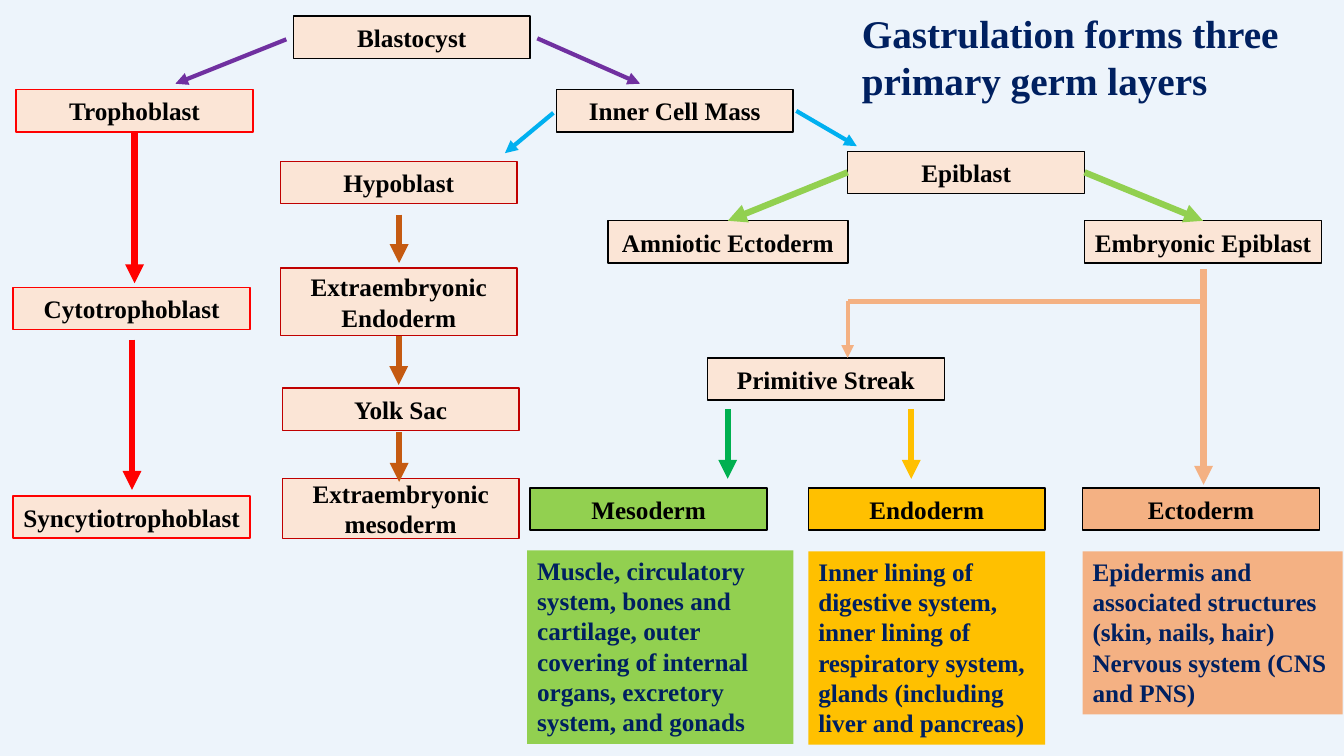
from dataclasses import dataclass
from typing import NamedTuple

from lxml.etree import SubElement
from pptx import Presentation
from pptx.dml.color import RGBColor
from pptx.enum.shapes import MSO_CONNECTOR as Connector, MSO_SHAPE as Preset
from pptx.enum.text import MSO_ANCHOR as Anchor, MSO_AUTO_SIZE as AutoSize, PP_ALIGN as Align
from pptx.oxml.ns import qn
from pptx.util import Pt


@dataclass(frozen=True)
class Theme:
    font: str = "Times New Roman"
    title_size: float = 28
    text_size: float = 18
    background: str = "EDF4FB"
    navy: str = "002060"
    black: str = "000000"
    cream: str = "FBE5D6"
    red: str = "FF0000"
    crimson: str = "C00000"
    purple: str = "7030A0"
    blue: str = "00B0F0"
    brown: str = "C55A11"
    lime: str = "92D050"
    green: str = "00B050"
    amber: str = "FFC000"
    peach: str = "F4B183"
    thin: float = 3
    thick: float = 4.5


THEME = Theme()


@dataclass(frozen=True)
class Box:
    text: str
    left: float
    top: float
    line: str = THEME.black
    fill: str = THEME.cream
    width: float = 169.2
    height: float = 30.2


@dataclass(frozen=True)
class Panel:
    paragraphs: tuple[str, ...]
    left: float
    top: float
    width: float
    height: float
    fill: str


class Point(NamedTuple):
    x: float
    y: float


class Side(NamedTuple):
    """Middle of a named box's side: 0 top, 1 left, 2 bottom, 3 right."""
    box: str
    index: int


@dataclass(frozen=True)
class Arrow:
    start: Point | Side
    end: Point | Side
    color: str
    width: float = THEME.thick
    head: bool = True


GERM_ROW = 348.5
BOXES = (
    Box("Blastocyst", 209.5, 11.5),
    Box("Trophoblast", 11.5, 64.1, THEME.red),
    Box("Inner Cell Mass", 397.4, 64.1),
    Box("Cytotrophoblast", 9.4, 205.2, THEME.red),
    Box("Syncytiotrophoblast", 9.4, 354.2, THEME.red),
    Box("Hypoblast", 200.2, 115.2, THEME.crimson),
    Box("Extraembryonic Endoderm", 200.2, 191.5, THEME.crimson, height=48.2),
    Box("Yolk Sac", 201.6, 277.2, THEME.crimson),
    Box("Extraembryonic mesoderm", 201.6, 342, THEME.crimson, height=42.5),
    Box("Epiblast", 605.5, 108),
    Box("Amniotic Ectoderm", 434.2, 157.7, width=171.4),
    Box("Embryonic Epiblast", 774.7, 157.7),
    Box("Primitive Streak", 505.4, 255.6),
    Box("Mesoderm", 378.7, GERM_ROW, fill=THEME.lime),
    Box("Endoderm", 577.4, GERM_ROW, fill=THEME.amber),
    Box("Ectoderm", 773.3, GERM_ROW, fill=THEME.peach),
)

PANELS = (
    Panel(("Muscle, circulatory system, bones and cartilage, outer covering of "
           "internal organs, excretory system, and gonads",),
          376.6, 393.1, 190.1, 138.2, THEME.lime),
    Panel(("Inner lining of digestive system, inner lining of respiratory system, "
           "glands (including liver and pancreas)",),
          577.4, 393.8, 169.2, 138.2, THEME.amber),
    Panel(("Epidermis and associated structures (skin, nails, hair)",
           "Nervous system (CNS and PNS)"),
          773.3, 393.8, 185.8, 116.6, THEME.peach),
)

BRANCH = Point(605.5, 215.3)
ARROWS = (
    Arrow(Point(383.8, 27.4), Point(457.2, 59.8), THEME.purple, THEME.thin),
    Arrow(Point(204.5, 28.1), Point(125.3, 59.8), THEME.purple, THEME.thin),
    Arrow(Side("Trophoblast", 2), Point(96.1, 202.3), THEME.red),
    Arrow(Point(94.3, 242.6), Point(94.3, 349.9), THEME.red),
    Arrow(Point(395.3, 80.6), Point(360.7, 109.4), THEME.blue, THEME.thin),
    Arrow(Point(568.8, 79.2), Point(612, 104.4), THEME.blue, THEME.thin),
    Arrow(Point(285.1, 153.4), Point(285.1, 187.9), THEME.brown),
    Arrow(Side("Extraembryonic Endoderm", 2), Point(284.8, 275), THEME.brown),
    Arrow(Point(285.1, 308.9), Point(285.1, 344.2), THEME.brown),
    Arrow(Side("Epiblast", 1), Side("Amniotic Ectoderm", 0), THEME.lime),
    Arrow(Side("Epiblast", 3), Side("Embryonic Epiblast", 0), THEME.lime),
    Arrow(Point(859.7, 192.2), Point(859.7, 346.3), THEME.peach),
    Arrow(Point(858.2, BRANCH.y), BRANCH, THEME.peach, THEME.thin, head=False),
    Arrow(BRANCH, Point(BRANCH.x, 255.6), THEME.peach, THEME.thin),
    Arrow(Point(519.8, 292.3), Point(519.8, 342), THEME.green),
    Arrow(Point(650.9, 292.3), Point(650.9, 342), THEME.amber),
)


def rgb(color: str) -> RGBColor:
    return RGBColor.from_string(color)


def write(frame, paragraphs: tuple[str, ...], size: float, color: str,
          align: Align, anchor: Anchor) -> None:
    frame.text = "\n".join(paragraphs)
    frame.word_wrap = True
    frame.auto_size = AutoSize.NONE
    frame.vertical_anchor = anchor
    for paragraph in frame.paragraphs:
        paragraph.alignment = align
        font = paragraph.font
        font.name, font.size, font.bold = THEME.font, Pt(size), True
        font.color.rgb = rgb(color)


def add_title(slide, text: str) -> None:
    title = slide.shapes.title
    title.left, title.top, title.width, title.height = map(Pt, (608.4, 2.9, 313.2, 74.9))
    write(title.text_frame, (text,), THEME.title_size, THEME.navy, Align.LEFT, Anchor.TOP)


def add_rectangle(slide, item: Box | Panel):
    shape = slide.shapes.add_shape(
        Preset.RECTANGLE, Pt(item.left), Pt(item.top), Pt(item.width), Pt(item.height))
    shape.shadow.inherit = False
    shape.fill.solid()
    shape.fill.fore_color.rgb = rgb(item.fill)
    return shape


def add_panel(slide, panel: Panel) -> None:
    shape = add_rectangle(slide, panel)
    shape.line.fill.background()
    write(shape.text_frame, panel.paragraphs, THEME.text_size, THEME.navy,
          Align.LEFT, Anchor.TOP)


def add_box(slide, box: Box):
    shape = add_rectangle(slide, box)
    shape.line.color.rgb = rgb(box.line)
    shape.line.width = Pt(1)
    frame = shape.text_frame
    frame.margin_left = frame.margin_right = Pt(5)
    write(frame, (box.text,), THEME.text_size, THEME.black, Align.CENTER, Anchor.MIDDLE)
    return shape


def add_arrow(slide, arrow: Arrow, boxes: dict) -> None:
    ends = [end if isinstance(end, Point) else Point(0, 0) for end in (arrow.start, arrow.end)]
    connector = slide.shapes.add_connector(
        Connector.STRAIGHT, *(Pt(value) for end in ends for value in end))
    for end, join in ((arrow.start, connector.begin_connect), (arrow.end, connector.end_connect)):
        if isinstance(end, Side):
            join(boxes[end.box], end.index)
    connector.line.color.rgb = rgb(arrow.color)
    connector.line.width = Pt(arrow.width)
    properties = connector._element.spPr
    if arrow.head:
        SubElement(properties.find(qn("a:ln")), qn("a:tailEnd"), type="triangle")
    SubElement(properties, qn("a:effectLst"))


def main() -> None:
    presentation = Presentation()
    presentation.slide_width, presentation.slide_height = Pt(960), Pt(540)
    slide = presentation.slides.add_slide(presentation.slide_layouts.get_by_name("Title Only"))
    slide.background.fill.solid()
    slide.background.fill.fore_color.rgb = rgb(THEME.background)
    add_title(slide, "Gastrulation forms three primary germ layers")
    for panel in PANELS:
        add_panel(slide, panel)
    boxes = {box.text: add_box(slide, box) for box in BOXES}
    for arrow in ARROWS:
        add_arrow(slide, arrow, boxes)
    presentation.save("out.pptx")


if __name__ == "__main__":
    main()
